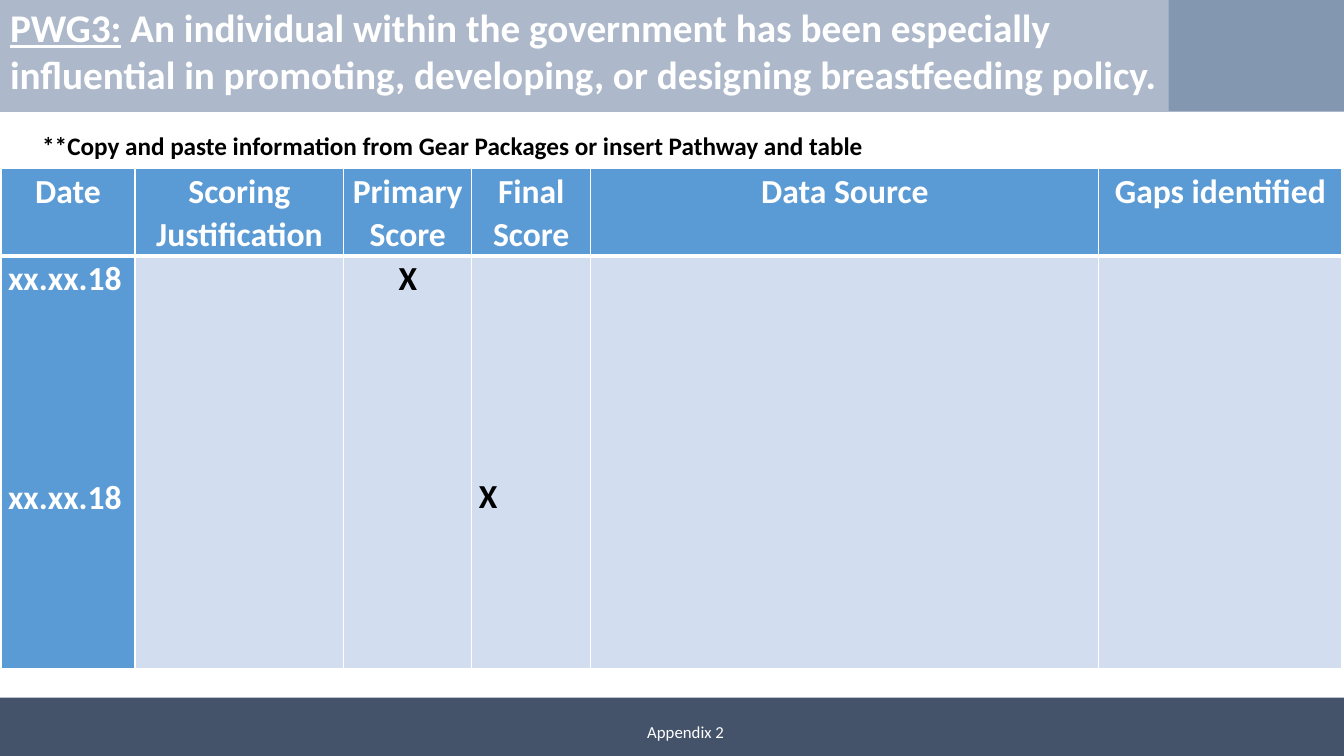
from lxml import etree
from pptx import Presentation
from pptx.dml.color import RGBColor
from pptx.enum.shapes import MSO_SHAPE
from pptx.enum.text import MSO_ANCHOR, MSO_AUTO_SIZE, PP_ALIGN
from pptx.oxml.ns import qn
from pptx.util import Inches, Pt

WHITE, BLACK = "FFFFFF", "000000"
HEADER_BLUE, BODY_BLUE = "5B9BD5", "D2DEEF"
LINE_SPACING = 1.07
COLUMNS = [("Date", 1.33), ("Scoring Justification", 2.07), ("Primary Score", 1.27),
           ("Final Score", 1.18), ("Data Source", 5.04), ("Gaps identified", 2.41)]
ROW_HEIGHTS = [0.87, 4.09]


def rgb(value):
    return RGBColor.from_string(value)


def format_runs(p, size, color, bold=False):
    for r in p.runs:
        r.font.name = "Calibri"
        r.font.size = Pt(size)
        r.font.bold = bold
        r.font.color.rgb = rgb(color)


def add_band(slide, left, top, width, height, color):
    sp = slide.shapes.add_shape(MSO_SHAPE.RECTANGLE, Inches(left), Inches(top),
                                Inches(width), Inches(height))
    sp.shadow.inherit = False
    sp.fill.solid()
    sp.fill.fore_color.rgb = rgb(color)
    sp.line.fill.background()


def add_label(slide, left, top, width, height, text, size, color, bold=False):
    sp = slide.shapes.add_textbox(Inches(left), Inches(top), Inches(width), Inches(height))
    tf = sp.text_frame
    tf.word_wrap = True
    tf.text = text
    format_runs(tf.paragraphs[0], size, color, bold)
    return tf


def add_title(slide, left, top, width, height):
    title = slide.shapes.title
    title.left, title.top = Inches(left), Inches(top)
    title.width, title.height = Inches(width), Inches(height)
    # Bring the title in front of the bands
    slide.shapes._spTree.append(title._element)
    tf = title.text_frame
    tf.word_wrap = True
    tf.auto_size = MSO_AUTO_SIZE.NONE
    tf.vertical_anchor = MSO_ANCHOR.MIDDLE
    p = tf.paragraphs[0]
    p.alignment = PP_ALIGN.LEFT
    code = p.add_run()
    code.text = "PWG3:"
    code.font.underline = True
    p.add_run().text = (" An individual within the government has been especially influential "
                        "in promoting, developing, or designing breastfeeding policy.")
    format_runs(p, 28, WHITE, True)


def set_borders(cell, **widths):
    tc_pr = cell._tc.get_or_add_tcPr()
    for i, side in enumerate("LRTB"):
        ln = etree.Element(qn(f"a:ln{side}"), w=str(Pt(widths.get(side, 1))))
        fill = etree.SubElement(ln, qn("a:solidFill"))
        etree.SubElement(fill, qn("a:srgbClr"), val=WHITE)
        tc_pr.insert(i, ln)


def format_cell(cell, fill, color, alignment):
    cell.margin_left = cell.margin_right = Inches(0.07)
    cell.margin_top = cell.margin_bottom = 0
    cell.fill.solid()
    cell.fill.fore_color.rgb = rgb(fill)
    for p in cell.text_frame.paragraphs:
        p.alignment = alignment
        p.line_spacing = LINE_SPACING
        format_runs(p, 24, color, True)


def add_score_table(slide, left, top):
    width = sum(w for _, w in COLUMNS)
    table = slide.shapes.add_table(2, len(COLUMNS), Inches(left), Inches(top), Inches(width),
                                   Inches(sum(ROW_HEIGHTS))).table
    for row, height in zip(table.rows, ROW_HEIGHTS):
        row.height = Inches(height)
    body_text = {0: "xx.xx.18\nxx.xx.18", 2: "X", 3: "X"}
    for i, (heading, col_width) in enumerate(COLUMNS):
        table.columns[i].width = Inches(col_width)
        head, body = table.cell(0, i), table.cell(1, i)

        # Heading
        head.text = heading
        format_cell(head, HEADER_BLUE, WHITE, PP_ALIGN.CENTER)
        if heading.endswith(" Score"):
            head.vertical_anchor = MSO_ANCHOR.MIDDLE
        set_borders(head, B=3)

        # Scores, with the dates as a heading column
        body.text = body_text.get(i, "")
        is_date = i == 0
        format_cell(body, HEADER_BLUE if is_date else BODY_BLUE, WHITE if is_date else BLACK,
                    PP_ALIGN.CENTER if heading == "Primary Score" else PP_ALIGN.LEFT)
        set_borders(body, T=3)

    # Second date and final score sit on the same line
    table.cell(1, 0).text_frame.paragraphs[1].space_before = Pt(125)
    table.cell(1, 3).margin_top = Inches(2.16)


def build_slide(prs):
    slide = prs.slides.add_slide(prs.slide_layouts[5])

    # Header and footer bands
    add_band(slide, 0, 0, 13.33, 1.11, "ADB9CA")
    add_band(slide, 0, 6.92, 13.33, 0.67, "445369")
    add_band(slide, 11.59, -0.01, 1.74, 1.11, "8497B0")

    # Footer text
    tf = add_label(slide, 2.39, 7.06, 8.82, 0.4, "Appendix 2", 12, WHITE)
    tf.vertical_anchor = MSO_ANCHOR.MIDDLE
    tf.paragraphs[0].alignment = PP_ALIGN.CENTER

    # Table and its instruction
    add_score_table(slide, 0.01, 1.67)
    tf = add_label(slide, 0.32, 1.22, 11.23, 0.43,
                   "**Copy and paste information from Gear Packages or insert Pathway and table",
                   18, BLACK, True)
    tf.paragraphs[0].line_spacing = LINE_SPACING

    add_title(slide, 0, 0.1, 12.22, 0.8)


def main():
    prs = Presentation()
    prs.slide_width, prs.slide_height = Inches(13.33), Inches(7.5)
    build_slide(prs)
    prs.save("out.pptx")


if __name__ == "__main__":
    main()
